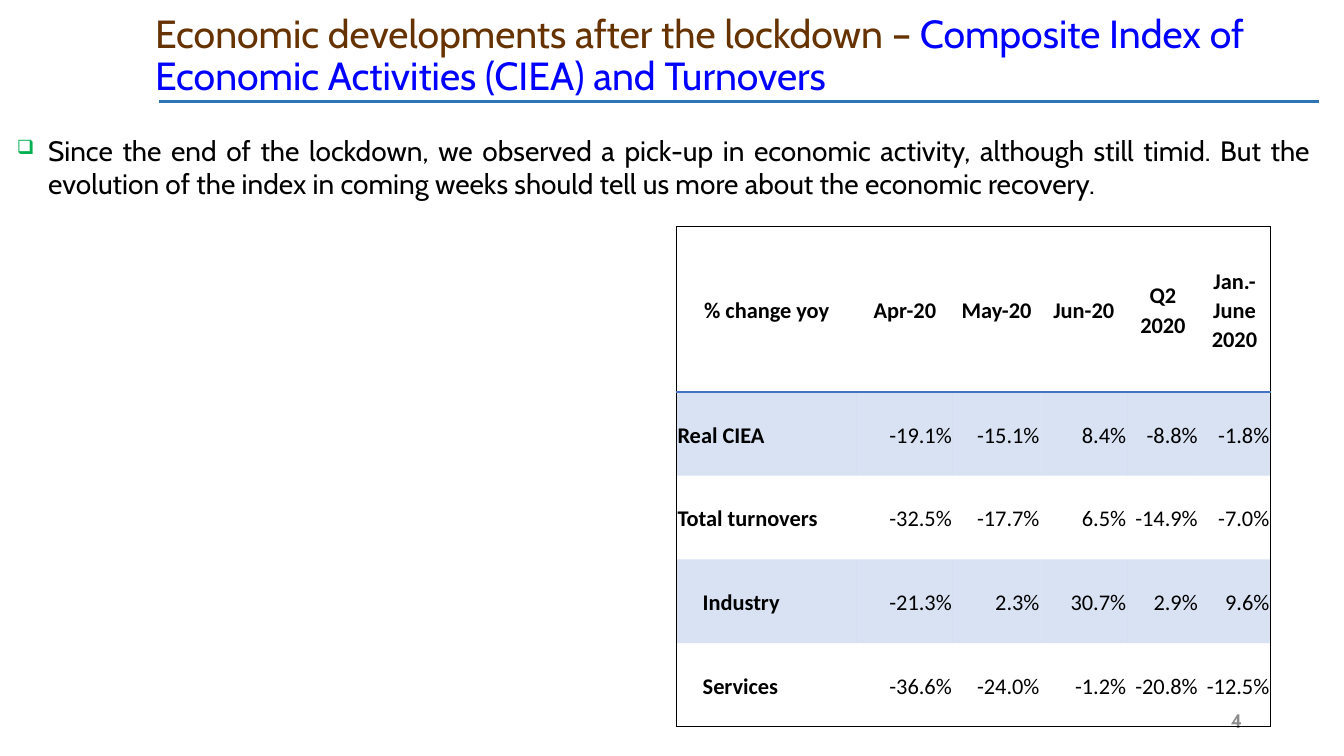
from lxml.etree import SubElement as Sub
from pptx import Presentation
from pptx.dml.color import RGBColor as Rgb
from pptx.enum.shapes import MSO_CONNECTOR as Conn
from pptx.enum.text import MSO_ANCHOR as Anchor, PP_ALIGN as Align
from pptx.oxml.ns import qn
from pptx.util import Emu, Inches, Pt

BLACK = Rgb(0, 0, 0)
BROWN = Rgb(0x66, 0x33, 0x00)
BLUE = Rgb(0, 0, 0xFF)
RULE = Rgb(0x2E, 0x75, 0xB6)
GREY = Rgb(0x8C, 0x8C, 0x8C)
GREEN = Rgb(0x00, 0xB0, 0x50)
BAND = Rgb(0x44, 0x72, 0xC4)
PLAIN = "{2D5ABB26-0587-4C30-8999-92F81FD0307C}"

HEAD = ["% change yoy", "Apr-20", "May-20", "Jun-20", "Q2 2020", "Jan.-June 2020"]
ROWS = [
    ["Real CIEA", "-19.1%", "-15.1%", "8.4%", "-8.8%", "-1.8%"],
    ["Total turnovers", "-32.5%", "-17.7%", "6.5%", "-14.9%", "-7.0%"],
    ["Industry", "-21.3%", "2.3%", "30.7%", "2.9%", "9.6%"],
    ["Services", "-36.6%", "-24.0%", "-1.2%", "-20.8%", "-12.5%"],
]
NESTED = {"Industry", "Services"}
WIDTHS = [1.79, 0.95, 0.87, 0.86, 0.71, 0.71]
HEIGHTS = [1.64] + [0.83] * len(ROWS)


def write(para, text, size=16, font="Cabin", color=BLACK, bold=False,
          align=Align.LEFT, space=1.0):
    para.alignment = align
    para.line_spacing = space
    run = para.add_run()
    run.text = text
    run.font.size = Pt(size)
    run.font.name = font
    run.font.bold = bold
    run.font.color.rgb = color


def add_box(slide, box, anchor=Anchor.TOP):
    frame = slide.shapes.add_textbox(*map(Inches, box)).text_frame
    frame.word_wrap = True
    frame.vertical_anchor = anchor
    return frame.paragraphs[0]


def add_title(slide, box):
    para = add_box(slide, box, Anchor.MIDDLE)
    write(para, "Economic developments after the lockdown – ",
          size=28, color=BROWN, space=0.9)
    write(para, "Composite Index of Economic Activities (CIEA) and Turnovers",
          size=28, color=BLUE, space=0.9)
    left, top, _, high = box
    start, y = Inches(left + 0.14), Inches(top + high + 0.01)
    rule = slide.shapes.add_connector(Conn.STRAIGHT, start, y, start + Inches(11.5), y)
    rule.line.color.rgb = RULE
    rule.line.width = Pt(2.25)
    Sub(rule._element.spPr, qn("a:effectLst"))


def add_point(slide, box):
    para = add_box(slide, box)
    props = para._p.get_or_add_pPr()
    props.set("marL", str(Inches(0.31)))
    props.set("indent", str(Inches(-0.31)))
    Sub(Sub(props, qn("a:buClr")), qn("a:srgbClr"), val=str(GREEN))
    Sub(props, qn("a:buSzPct"), val="70000")
    Sub(props, qn("a:buChar"), char="❑")
    para.space_after = Pt(6)
    write(para, "Since the end of the lockdown, we observed a pick-up in economic "
          "activity, although still timid. But the evolution of the index in coming "
          "weeks should tell us more about the economic recovery.",
          size=20, align=Align.JUSTIFY)


def add_edge(cell, side, color):
    line = Sub(cell._tc.get_or_add_tcPr(), qn("a:ln" + side), w=str(Pt(1)))
    Sub(Sub(line, qn("a:solidFill")), qn("a:srgbClr"), val=str(color))


def fill_cell(cell, band):
    if not band:
        cell.fill.background()
        return
    cell.fill.solid()
    cell.fill.fore_color.rgb = BAND
    tint = cell._tc.tcPr.find(qn("a:solidFill"))[0]
    Sub(tint, qn("a:alpha"), val="20000")


def add_grid(slide, box):
    data = [HEAD] + ROWS
    table = slide.shapes.add_table(len(data), len(HEAD), *map(Inches, box)).table
    table._tbl.tblPr.find(qn("a:tableStyleId")).text = PLAIN
    for col, wide in zip(table.columns, WIDTHS):
        col.width = Inches(wide)
    for row, high in zip(table.rows, HEIGHTS):
        row.height = Inches(high)
    end_row, end_col = len(data) - 1, len(HEAD) - 1
    for r, texts in enumerate(data):
        for c, text in enumerate(texts):
            cell = table.cell(r, c)
            cell.vertical_anchor = Anchor.MIDDLE
            cell.margin_left = Inches(0.26 if text in NESTED else 0.01)
            cell.margin_right = cell.margin_top = Inches(0.01)
            cell.margin_bottom = Emu(0)
            edges = [("L", c == 0, BLACK), ("R", c == end_col, BLACK),
                     ("T", r == 0, BLACK), ("B", r == 0, BAND),
                     ("B", r == end_row, BLACK)]
            for side, shown, color in edges:
                if shown:
                    add_edge(cell, side, color)
            fill_cell(cell, r % 2 == 1)
            align = Align.CENTER if r == 0 else Align.RIGHT if c else Align.LEFT
            write(cell.text_frame.paragraphs[0], text, font="Calibri",
                  bold=r == 0 or c == 0, align=align, space=1.07)


def add_number(slide, box):
    write(add_box(slide, box, Anchor.MIDDLE), "4", size=14, color=GREY,
          bold=True, align=Align.RIGHT)


def main():
    deck = Presentation()
    deck.slide_width = Inches(13.33)
    deck.slide_height = Inches(7.5)
    slide = deck.slides.add_slide(deck.slide_layouts[6])
    add_title(slide, (1.44, 0.13, 11.82, 0.87))
    add_number(slide, (9.42, 6.95, 3, 0.4))
    add_point(slide, (0.07, 1.27, 13.03, 0.82))
    add_grid(slide, (6.71, 2.25, 5.89, 4.94))
    deck.save("out.pptx")


if __name__ == "__main__":
    main()
